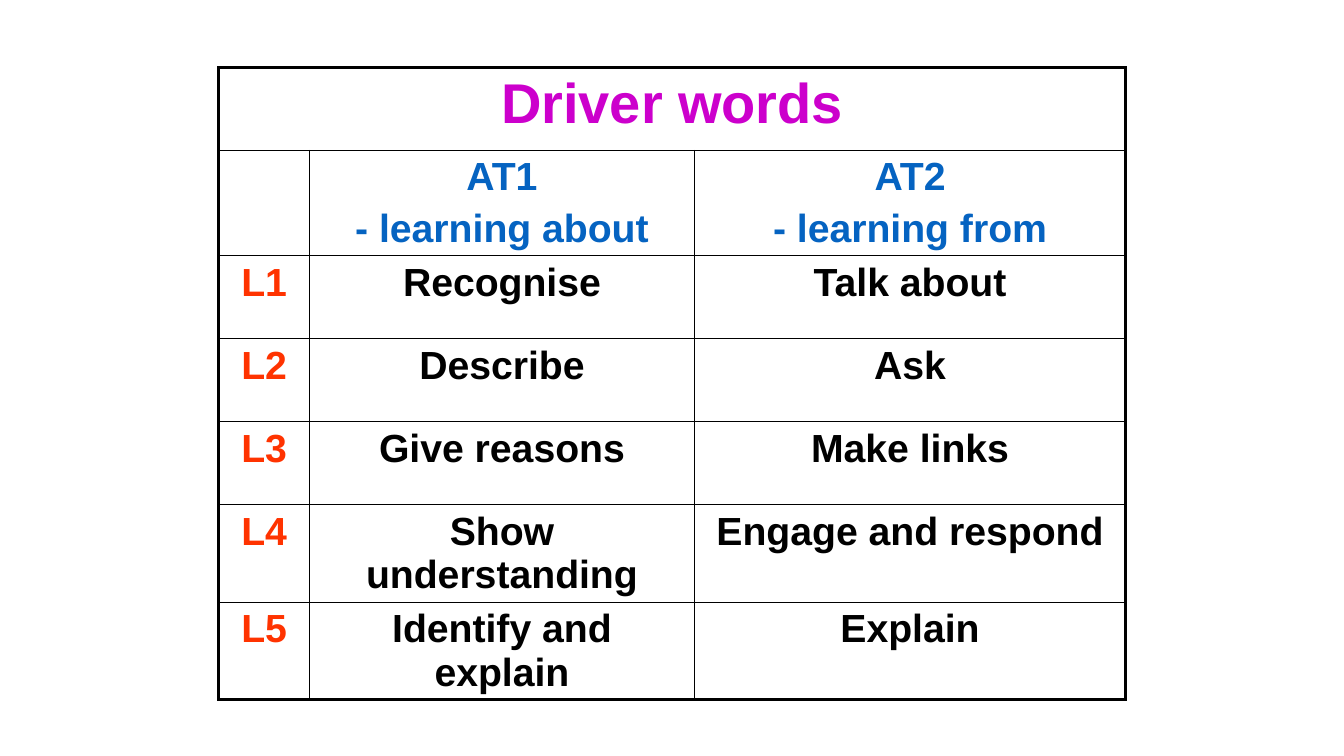
from lxml import etree
from pptx import Presentation
from pptx.dml.color import RGBColor
from pptx.enum.text import PP_ALIGN
from pptx.oxml.ns import qn
from pptx.util import Cm, Pt

CENTER = PP_ALIGN.CENTER
MAGENTA = RGBColor(0xCC, 0x00, 0xCC)
BLUE = RGBColor(0x05, 0x63, 0xC1)
ORANGE = RGBColor(0xFF, 0x33, 0x00)
BLACK = RGBColor(0x00, 0x00, 0x00)

FONT = "Arial"
INNER_LINE, OUTER_LINE = Pt(1), Pt(2.25)
COLUMN_WIDTHS = [Cm(2.29), Cm(9.7), Cm(10.87)]
ROW_HEIGHT = Cm(2.09)

HEADING = "Driver words"
TARGETS = [["AT1", "- learning about"], ["AT2", "- learning from"]]
LEVELS = [
    ("L1", "Recognise", "Talk about"),
    ("L2", "Describe", "Ask"),
    ("L3", "Give reasons", "Make links"),
    ("L4", "Show understanding", "Engage and respond"),
    ("L5", "Identify and explain", "Explain"),
]


def write_cell(cell, lines, color, size=28):
    """Fill a cell with centred bold lines, spaced by 20% of the text size."""
    frame = cell.text_frame
    for index, line in enumerate(lines):
        paragraph = frame.add_paragraph() if index else frame.paragraphs[0]
        paragraph.alignment = CENTER
        spacing = etree.SubElement(paragraph._p.get_or_add_pPr(), qn("a:spcBef"))
        etree.SubElement(spacing, qn("a:spcPct"), val="20000")
        run = paragraph.add_run()
        run.text = line
        run.font.name = FONT
        run.font.size = Pt(size)
        run.font.bold = True
        run.font.color.rgb = color


def add_border(cell, side, width):
    line = etree.SubElement(cell._tc.get_or_add_tcPr(), qn(f"a:ln{side}"), w=str(width))
    fill = etree.SubElement(line, qn("a:solidFill"))
    etree.SubElement(fill, qn("a:srgbClr"), val=str(BLACK))


def frame_cells(table):
    """Draw thin inner lines and a thick outer frame, without cell fills."""
    last_row, last_column = len(table.rows) - 1, len(table.columns) - 1
    for r in range(last_row + 1):
        for c in range(last_column + 1):
            cell = table.cell(r, c)
            if cell.is_spanned:
                continue
            right_column = c + cell.span_width - 1
            outer_sides = {
                "L": c == 0,
                "R": right_column == last_column,
                "T": r == 0,
                "B": r == last_row,
            }
            for side, is_outer in outer_sides.items():
                add_border(cell, side, OUTER_LINE if is_outer else INNER_LINE)
            cell.fill.background()


def add_driver_table(slide):
    row_count = len(LEVELS) + 2
    table = slide.shapes.add_table(
        row_count, len(COLUMN_WIDTHS), Cm(5.51), Cm(1.7),
        sum(COLUMN_WIDTHS), ROW_HEIGHT * row_count,
    ).table
    table.first_row = False
    table.horz_banding = False
    for column, width in zip(table.columns, COLUMN_WIDTHS):
        column.width = width
    for row in table.rows:
        row.height = ROW_HEIGHT

    # Heading across all columns
    table.cell(0, 0).merge(table.cell(0, len(COLUMN_WIDTHS) - 1))
    write_cell(table.cell(0, 0), [HEADING], MAGENTA, size=40)

    # Attainment targets
    for c, target in enumerate(TARGETS, start=1):
        write_cell(table.cell(1, c), target, BLUE)

    # Levels with their driver words
    for r, level in enumerate(LEVELS, start=2):
        for c, words in enumerate(level):
            write_cell(table.cell(r, c), [words], BLACK if c else ORANGE)

    frame_cells(table)


def main():
    presentation = Presentation()
    presentation.slide_width = Cm(33.87)
    presentation.slide_height = Cm(19.05)
    blank_layout = presentation.slide_layouts[6]
    slide = presentation.slides.add_slide(blank_layout)
    add_driver_table(slide)
    presentation.save("out.pptx")


if __name__ == "__main__":
    main()
